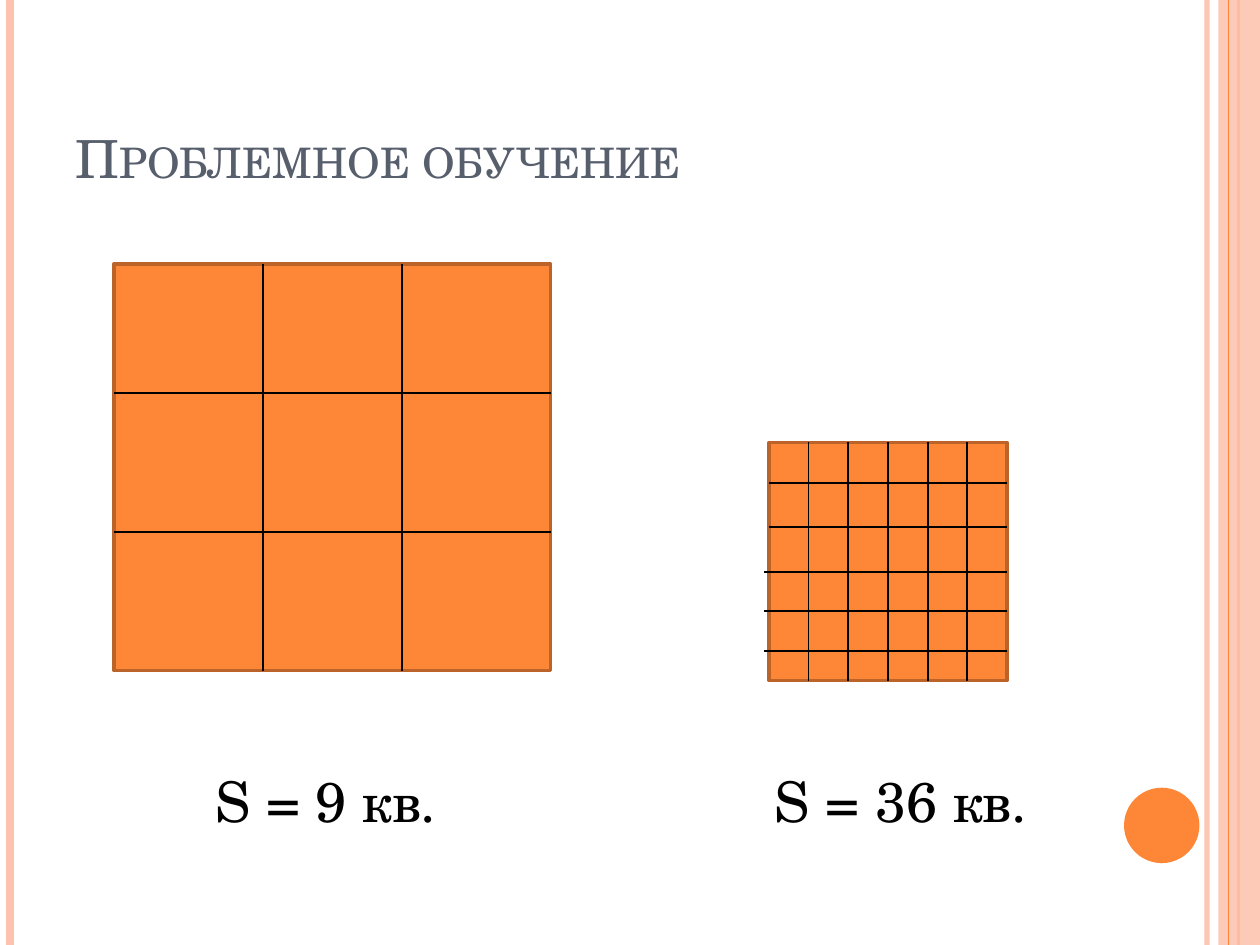
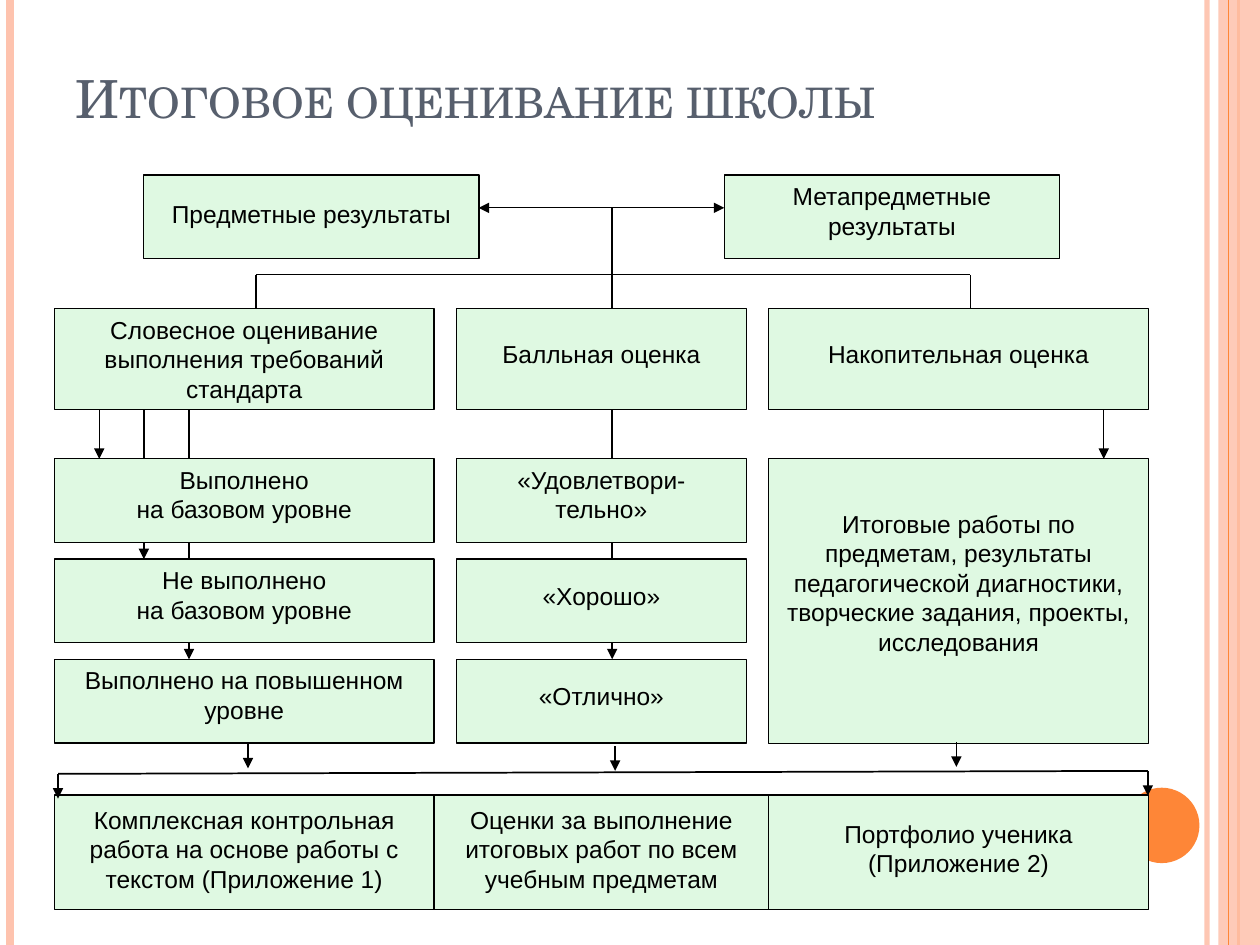
from dataclasses import dataclass

from lxml.etree import SubElement
from pptx import Presentation
from pptx.dml.color import RGBColor
from pptx.enum.shapes import MSO_CONNECTOR, MSO_SHAPE
from pptx.enum.text import MSO_ANCHOR, MSO_AUTO_SIZE, PP_ALIGN
from pptx.oxml.ns import qn
from pptx.util import Cm, Pt


@dataclass(frozen=True)
class Theme:
    orange: RGBColor = RGBColor.from_string("FE8637")
    dark_orange: RGBColor = RGBColor.from_string("BC6329")
    pink: RGBColor = RGBColor.from_string("FEC3AE")
    green: RGBColor = RGBColor.from_string("DFF9E2")
    slate: RGBColor = RGBColor.from_string("575F6D")
    black: RGBColor = RGBColor.from_string("000000")
    serif: str = "TeX Gyre Schola"
    sans: str = "Arial"
    title_size: Pt = Pt(30)
    label_size: Pt = Pt(32)
    box_size: Pt = Pt(14)


T = Theme()
W, H = 25.4, 19.05


def add_line(s, x1, y1, x2, y2, color=T.black, width=0.75, ends=()):
    """Draw a line; ends may hold "headEnd" (start) and "tailEnd" (finish) arrows."""
    c = s.shapes.add_connector(MSO_CONNECTOR.STRAIGHT, Cm(x1), Cm(y1), Cm(x2), Cm(y2))
    c.line.color.rgb = color
    c.line.width = Pt(width)
    for end in ends:
        SubElement(c.line._get_or_add_ln(), qn(f"a:{end}"), type="triangle")
    SubElement(c._element.spPr, qn("a:effectLst"))
    return c


def add_filled(s, kind, x, y, w, h, fill, outline=None, width=0.75):
    shape = s.shapes.add_shape(kind, Cm(x), Cm(y), Cm(w), Cm(h))
    shape.shadow.inherit = False
    shape.fill.solid()
    shape.fill.fore_color.rgb = fill
    if outline is None:
        shape.line.fill.background()
    else:
        shape.line.color.rgb = outline
        shape.line.width = Pt(width)
    return shape


prs = Presentation()
prs.slide_width, prs.slide_height = Cm(W), Cm(H)
layout = prs.slide_layouts[5]

# Titles
slides = []
for title, height in (("Проблемное обучение", 3.18), ("Итоговое оценивание школы", 1.96)):
    s = prs.slides.add_slide(layout)
    sp = s.shapes.title
    sp.left, sp.top, sp.width, sp.height = Cm(1.27), Cm(0.76), Cm(20.75), Cm(height)
    tf = sp.text_frame
    tf.text = title
    tf.auto_size = MSO_AUTO_SIZE.NONE
    tf.vertical_anchor = MSO_ANCHOR.BOTTOM
    p = tf.paragraphs[0]
    p.alignment = PP_ALIGN.LEFT
    p.font.name, p.font.size = T.serif, T.title_size
    p.font.color.rgb = T.slate
    p.runs[0].font._element.set("cap", "small")
    slides.append(s)
squares, scheme = slides

# Side bands and disc, drawn once and moved to the shared layout
thin_band = add_line(squares, 24.33, 0, 24.33, H, T.pink, 3)
left_band = add_line(squares, 0.2, 0, 0.2, H, T.pink, 4.5)
stripe = add_line(squares, 24.97, 0, 24.97, H, T.orange, 1.5)
wide_band = add_filled(squares, MSO_SHAPE.RECTANGLE, 24.56, 0, 0.84, H, T.pink)
hairline = add_line(squares, 24.77, 0, 24.77, H, T.orange, 0.75)
disc = add_filled(squares, MSO_SHAPE.OVAL, 22.66, 15.88, 1.52, 1.52, T.orange)
for band, opacity in ((thin_band, 93), (wide_band, 87)):
    color = next(band._element.spPr.iter(qn("a:srgbClr")))
    SubElement(color, qn("a:alpha"), val=str(opacity * 1000))
for shape in (thin_band, left_band, stripe, wide_band, hairline, disc):
    layout.shapes.element.append(shape._element)

# Slide 1: two squares divided into cells; each row is (y, start x)
s = squares
grids = (
    (2.3, 5.32, 8.8, 8.2, (5.31, 8.1), ((7.92, 2.3), (10.72, 2.3))),
    (15.5, 8.92, 4.8, 4.8, [15.5 + 0.8 * i for i in range(1, 6)],
     ((9.73, 15.5), (10.62, 15.5), (11.53, 15.4), (12.32, 15.4), (13.13, 15.4))),
)
for x, y, w, h, columns, rows in grids:
    add_filled(s, MSO_SHAPE.RECTANGLE, x, y, w, h, T.orange, T.dark_orange, 2)
    for column in columns:
        add_line(s, column, y, column, y + h, width=1)
    for row, start in rows:
        add_line(s, start, row, x + w, row, width=1)

for text, x, w in (("S = 9 кв.", 4.09, 5.2), ("S = 36 кв.", 15.37, 6.2)):
    tf = s.shapes.add_textbox(Cm(x), Cm(15.32), Cm(w), Cm(1.63)).text_frame
    tf.word_wrap = True
    tf.text = text
    p = tf.paragraphs[0]
    p.font.name, p.font.size = T.serif, T.label_size
    p.font.color.rgb = T.black

# Slide 2: scheme of assessment
s = scheme
arrow, both = ("tailEnd",), ("headEnd", "tailEnd")
left, middle, right = (1.1, 7.65), (9.2, 5.85), (15.5, 7.65)
kinds_y, kinds_h = 6.22, 2.04
kinds_bottom = kinds_y + kinds_h
levels_y = [9.25 + 2.02 * i for i in range(3)]
level_h, result_h = 1.69, 2.3
result_y = 16.03
axis = 12.34

# Arrows that run behind the boxes
for x, end in ((axis, levels_y[2]), (3.81, levels_y[2]), (2.9, levels_y[1]),
               (2.0, levels_y[0]), (22.25, levels_y[0])):
    add_line(s, x, kinds_bottom, x, end, ends=arrow)

# Each box: column (x, width), top, height, extra space above the text in points, text
boxes = [
    ((2.9, 6.76), 3.53, level_h, 10, "Предметные результаты"),
    ((14.6, 6.76), 3.53, level_h, 0, "Метапредметные результаты"),
    (left, kinds_y, kinds_h, 0, "Словесное оценивание выполнения требований стандарта"),
    (middle, kinds_y, kinds_h, 14, "Балльная оценка"),
    (right, kinds_y, kinds_h, 14, "Накопительная оценка"),
    (right, levels_y[0], 5.74, 25,
     "Итоговые работы по предметам, результаты педагогической диагностики, "
     "творческие задания, проекты, исследования"),
    ((1.1, 7.65), result_y, result_h, 2,
     "Комплексная контрольная работа на основе работы с текстом (Приложение 1)"),
    ((8.75, 6.75), result_y, result_h, 2,
     "Оценки за выполнение итоговых работ по всем учебным предметам"),
    (right, result_y, result_h, 10, "Портфолио ученика\n(Приложение 2)"),
]
levels = (
    (left, ((0, "Выполнено\nна базовом уровне"), (0, "Не выполнено\nна базовом уровне"),
            (0, "Выполнено на повышенном уровне"))),
    (middle, ((0, "«Удовлетвори-\nтельно»"), (9, "«Хорошо»"), (9, "«Отлично»"))),
)
for column, cells in levels:
    for y, (space, text) in zip(levels_y, cells):
        boxes.append((column, y, level_h, space, text))

for (x, w), y, h, space, text in boxes:
    sp = add_filled(s, MSO_SHAPE.RECTANGLE, x, y, w, h, T.green, T.black)
    tf = sp.text_frame
    tf.word_wrap = True
    tf.vertical_anchor = MSO_ANCHOR.TOP
    tf.margin_top = Pt(3.6 + space)
    tf.text = text
    for p in tf.paragraphs:
        p.alignment = PP_ALIGN.CENTER
        p.font.name, p.font.size = T.sans, T.box_size
        p.font.color.rgb = T.black

# Branches from the two kinds of results to the three kinds of assessment
results_y, branch_y = 4.19, 5.54
add_line(s, 9.65, results_y, 14.6, results_y, ends=both)
add_line(s, 5.16, branch_y, 19.56, branch_y)
for x, y in ((5.16, branch_y), (axis, results_y), (19.56, branch_y)):
    add_line(s, x, y, x, kinds_y)

# Arrows to the bar above the final documents
for x, y in ((5.0, 14.99), (12.4, 15.04), (19.28, 14.96)):
    add_line(s, x, y, x, y + 0.5, ends=arrow)
bar = ((1.17, 15.6), (23.14, 15.54))
add_line(s, *bar[0], *bar[1], width=1)
for x, y in bar:
    add_line(s, x, y, x, y + 0.5, ends=arrow)

prs.save("out.pptx")
